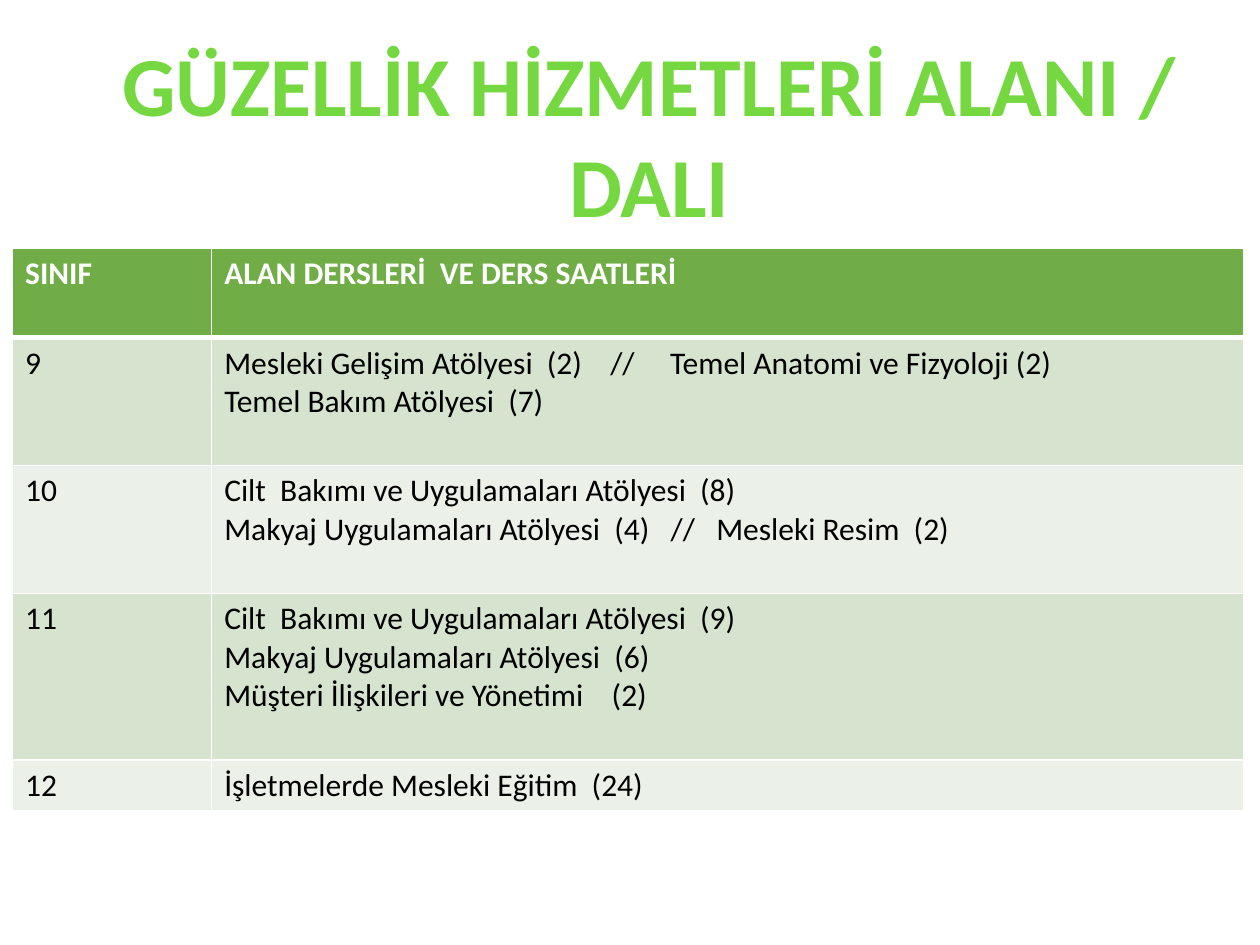
"""Build the slide listing the beauty services courses by grade."""
import dataclasses

import lxml.etree
import pptx
import pptx.dml.color
import pptx.enum.text
import pptx.oxml.ns
import pptx.util


@dataclasses.dataclass(frozen=True)
class Theme:
    """Colours and type sizes of the slide."""
    font: str = "Calibri"
    title: str = "75D840"
    header: str = "70AD47"
    bands: tuple[str, str] = ("D5E3CF", "EBF1E9")
    text: str = "000000"
    white: str = "FFFFFF"
    title_size: int = 48
    body_size: int = 18
    thin: int = 1
    thick: int = 3


@dataclasses.dataclass(frozen=True)
class Grade:
    """A table row: its label, its lines and its height in text lines."""
    label: str
    lessons: tuple[str, ...]
    height: int


THEME = Theme()
WIDTH, HEIGHT = pptx.util.Inches(10), pptx.util.Inches(7.5)
GRID = 100
TITLE_BOX = (5.5, 2.8, 92.1, 22.93)
TABLE_LEFT, TABLE_TOP = 1, 26.27
TABLE_COLUMNS = (15.8, 81.9)
LINE_ROWS, PADDING_ROWS = 4.07, 1.33
GRADES = (
    Grade("SINIF", ("ALAN DERSLERİ  VE DERS SAATLERİ",), 2),
    Grade("9", ("Mesleki Gelişim Atölyesi  (2)    //     Temel Anatomi ve Fizyoloji (2)",
                "Temel Bakım Atölyesi  (7)"), 3),
    Grade("10", ("Cilt  Bakımı ve Uygulamaları Atölyesi  (8)",
                 "Makyaj Uygulamaları Atölyesi  (4)   //   Mesleki Resim  (2)"), 3),
    Grade("11", ("Cilt  Bakımı ve Uygulamaları Atölyesi  (9)",
                 "Makyaj Uygulamaları Atölyesi  (6)",
                 "Müşteri İlişkileri ve Yönetimi    (2)"), 4),
    Grade("12", ("İşletmelerde Mesleki Eğitim  (24)",), 1),
)


def across(columns: float) -> int:
    """Return the length of a number of grid columns."""
    return round(WIDTH * columns / GRID)


def down(rows: float) -> int:
    """Return the length of a number of grid rows."""
    return round(HEIGHT * rows / GRID)


def format_object(target: object, values: dict) -> None:
    """Set each attribute named in the format values."""
    for name, value in values.items():
        setattr(target, name, value)


def write_text(frame: pptx.text.text.TextFrame, lines: tuple[str, ...], size: int,
               color: str, bold: bool) -> None:
    """Write one formatted paragraph for each line."""
    frame.text = "\n".join(lines)
    for paragraph in frame.paragraphs:
        font = paragraph.runs[0].font
        format_object(font, {"name": THEME.font, "size": pptx.util.Pt(size), "bold": bold})
        font.color.rgb = pptx.dml.color.RGBColor.from_string(color)


def draw_borders(cell: pptx.table._Cell, top: int, bottom: int) -> None:
    """Give a cell white borders, placed ahead of its fill."""
    properties = cell._tc.get_or_add_tcPr()
    widths = {"lnL": THEME.thin, "lnR": THEME.thin, "lnT": top, "lnB": bottom}
    for position, (tag, width) in enumerate(widths.items()):
        line = lxml.etree.Element(pptx.oxml.ns.qn(f"a:{tag}"), w=str(pptx.util.Pt(width)))
        fill = lxml.etree.SubElement(line, pptx.oxml.ns.qn("a:solidFill"))
        lxml.etree.SubElement(fill, pptx.oxml.ns.qn("a:srgbClr"), val=THEME.white)
        properties.insert(position, line)


def draw_title(slide: pptx.slide.Slide) -> None:
    """Place and format the title placeholder."""
    left, top, width, height = TITLE_BOX
    shape = slide.shapes.title
    format_object(shape, {"left": across(left), "top": down(top),
                          "width": across(width), "height": down(height)})
    write_text(shape.text_frame, ("GÜZELLİK HİZMETLERİ ALANI / DALI",),
               THEME.title_size, THEME.title, True)
    format_object(shape.text_frame, {
        "word_wrap": True,
        "auto_size": pptx.enum.text.MSO_AUTO_SIZE.SHAPE_TO_FIT_TEXT,
        "vertical_anchor": pptx.enum.text.MSO_ANCHOR.TOP,
    })
    shape.text_frame.paragraphs[0].alignment = pptx.enum.text.PP_ALIGN.CENTER


def draw_table(slide: pptx.slide.Slide, grades: tuple[Grade, ...]) -> None:
    """Draw the header and the banded rows of the course table."""
    heights = [down(PADDING_ROWS + grade.height * LINE_ROWS) for grade in grades]
    table = slide.shapes.add_table(
        len(grades), len(TABLE_COLUMNS), across(TABLE_LEFT), down(TABLE_TOP),
        across(sum(TABLE_COLUMNS)), sum(heights)).table
    for column, width in zip(table.columns, TABLE_COLUMNS):
        column.width = across(width)
    for index, (row, grade, height) in enumerate(zip(table.rows, grades, heights)):
        row.height = height
        header = index == 0
        color = THEME.header if header else THEME.bands[(index - 1) % 2]
        for cell, lines in zip(row.cells, ((grade.label,), grade.lessons)):
            write_text(cell.text_frame, lines, THEME.body_size,
                       THEME.white if header else THEME.text, header)
            cell.fill.solid()
            cell.fill.fore_color.rgb = pptx.dml.color.RGBColor.from_string(color)
            draw_borders(cell, THEME.thick if index == 1 else THEME.thin,
                         THEME.thick if header else THEME.thin)


def main() -> None:
    """Build and save the presentation."""
    presentation = pptx.Presentation()
    format_object(presentation, {"slide_width": WIDTH, "slide_height": HEIGHT})
    slide = presentation.slides.add_slide(presentation.slide_layouts.get_by_name("Title Only"))
    draw_title(slide)
    draw_table(slide, GRADES)
    presentation.save("out.pptx")


if __name__ == "__main__":
    main()
